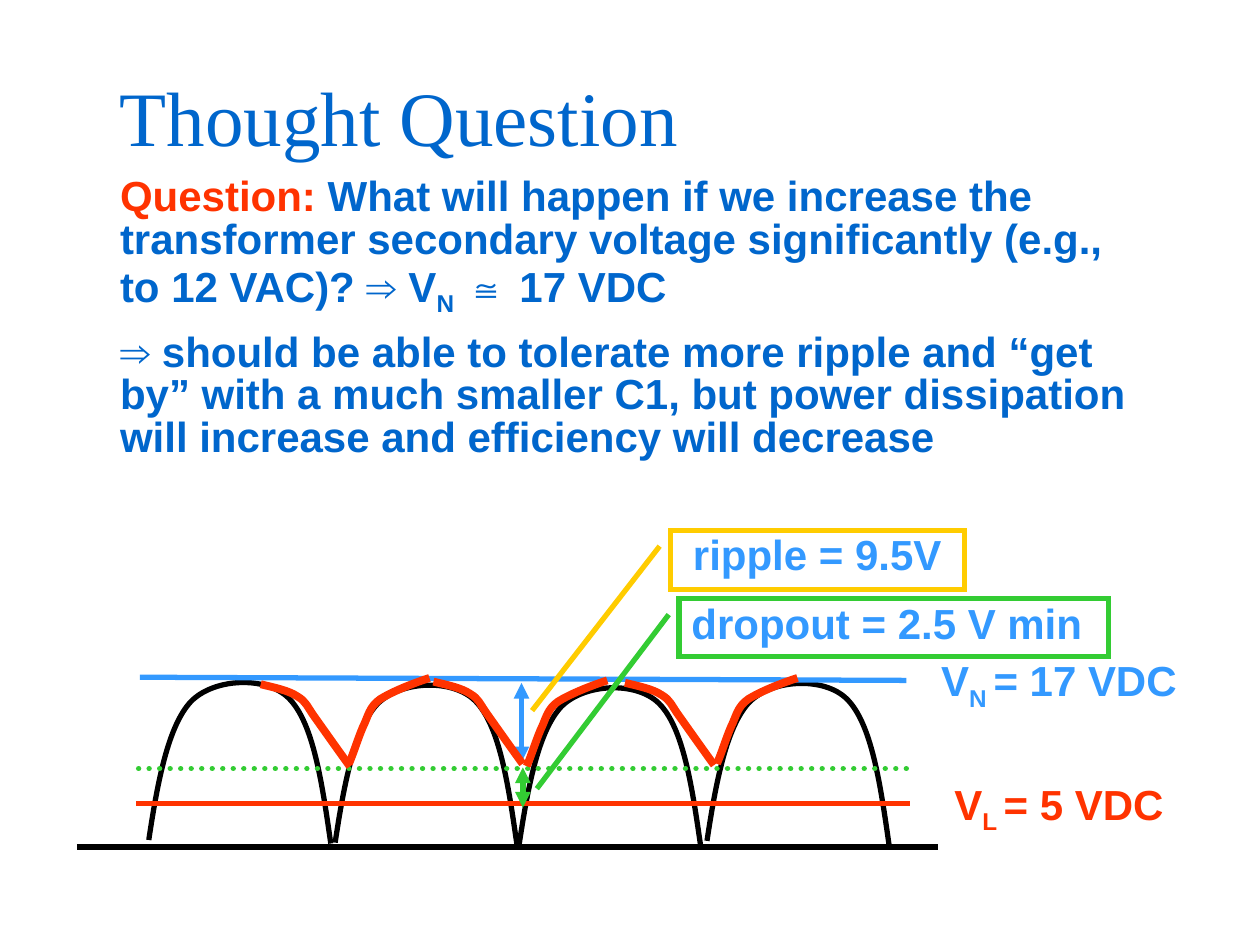
import pptx
import pptx.dml.color
import pptx.enum.dml
import pptx.enum.shapes
import pptx.enum.text
import pptx.oxml.ns
import pptx.util
from lxml import etree

Pt = pptx.util.Pt
RGBColor = pptx.dml.color.RGBColor
ALIGN = pptx.enum.text.PP_ALIGN
qn = pptx.oxml.ns.qn
BLUE = RGBColor(0x00, 0x66, 0xCC)
SKY = RGBColor(0x33, 0x99, 0xFF)
RED = RGBColor(0xFF, 0x33, 0x00)
GREEN = RGBColor(0x33, 0xCC, 0x33)
GOLD = RGBColor(0xFF, 0xCC, 0x00)
BLACK = RGBColor(0x00, 0x00, 0x00)

ARCH = ((0, 94), (5, 61), (11, 29), (24, 15), (37, 1.5), (67, 0), (80, 13),
        (94, 27), (99, 61), (104, 96))
DISCHARGE = ((0, 0), (8, 2), (16, 3.6), (21, 7), (26, 10), (26, 12), (31, 19),
             (36, 26), (43, 36), (51, 47))
CHARGE = ((0, 49), (3, 42), (5, 35), (8, 28), (11, 22), (11.5, 16.5), (18, 12),
          (24.5, 8), (35, 3.6), (46, 0))
ARCH_SPOTS = ((41, 83), (147.5, 84.5), (252.6, 86), (360, 83.5))
DISCHARGE_SPOTS = ((105, 88), (203.7, 86.5), (313.1, 87.2))
CHARGE_SPOTS = ((155.4, 84.4), (257, 85.8), (365.7, 84.4))


def add_curve(page, curve, left, top, color, width):
    """Draw an unfilled chain of cubic curves that starts at left, top."""
    points = [(Pt(left + x), Pt(top + y)) for x, y in curve]
    builder = page.shapes.build_freeform(*points[0])
    builder.add_line_segments(points[1:], close=False)
    shape = builder.convert_to_shape()
    outline = next(shape._element.iter(qn("a:path")))
    segments = outline.findall(qn("a:lnTo"))
    for start in range(0, len(segments), 3):
        cubic = etree.SubElement(outline, qn("a:cubicBezTo"))
        for segment in segments[start:start + 3]:
            cubic.append(segment[0])
            outline.remove(segment)
    shape.shadow.inherit = False
    shape.fill.background()
    shape.line.color.rgb = color
    shape.line.width = Pt(width)


def add_line(page, start, end, color, dotted=False, arrows=False):
    """Draw a straight line, optionally dotted or with two arrowheads."""
    line = page.shapes.add_connector(pptx.enum.shapes.MSO_CONNECTOR.STRAIGHT,
                                     *(Pt(value) for value in start + end))
    line.line.color.rgb = color
    line.line.width = Pt(3)
    properties = line._element.spPr
    stroke = properties.find(qn("a:ln"))
    if dotted:
        line.line.dash_style = pptx.enum.dml.MSO_LINE.ROUND_DOT
        stroke.set("cap", "rnd")
    if arrows:
        for end_name in ("a:headEnd", "a:tailEnd"):
            etree.SubElement(stroke, qn(end_name), type="triangle")
    etree.SubElement(properties, qn("a:effectLst"))


def write_paragraph(para, spans, color, align=ALIGN.LEFT):
    """Fill a paragraph from (text, color, is_subscript) spans."""
    para.alignment = align
    para.line_spacing = 0.85
    para.font.name = "Arial"
    para.font.size = Pt(24)
    para.font.bold = True
    para.font.color.rgb = color
    for text, span_color, subscript in spans:
        span = para.add_run()
        span.text = text
        if span_color:
            span.font.color.rgb = span_color
        if subscript:
            span._r.get_or_add_rPr().set("baseline", "-25000")


def add_text(page, box):
    """Add a wrapping text box and return its frame."""
    frame = page.shapes.add_textbox(*(Pt(value) for value in box)).text_frame
    frame.word_wrap = True
    return frame


def add_callout(page, box, text, color, adjustments, align):
    """Add a square-cornered callout with a leader line."""
    shape = page.shapes.add_shape(pptx.enum.shapes.MSO_SHAPE.LINE_CALLOUT_1,
                                  *(Pt(value) for value in box))
    for index, value in enumerate(adjustments):
        shape.adjustments[index] = value
    shape.shadow.inherit = False
    shape.fill.background()
    shape.line.color.rgb = color
    shape.line.width = Pt(3)
    etree.SubElement(shape._element.spPr.find(qn("a:ln")), qn("a:miter"), lim="800000")
    shape.text_frame.vertical_anchor = pptx.enum.text.MSO_ANCHOR.TOP
    write_paragraph(shape.text_frame.paragraphs[0], [(text, None, False)], SKY, align)


def place_title(page, box):
    """Move and format the title placeholder."""
    title = page.shapes.title
    title.left, title.top, title.width, title.height = (Pt(value) for value in box)
    title.text_frame.vertical_anchor = pptx.enum.text.MSO_ANCHOR.MIDDLE
    para = title.text_frame.paragraphs[0]
    para.text = "Thought Question"
    para.alignment = ALIGN.LEFT
    para.font.name = "Times New Roman"
    para.font.size = Pt(44)
    para.font.color.rgb = BLUE


def place_question(page, box):
    """Write the question and its answer."""
    frame = add_text(page, box)
    write_paragraph(frame.paragraphs[0], [
        ("Question:", RED, False),
        (" What will happen if we increase the transformer secondary voltage "
         "significantly (e.g., to 12 VAC)? ⇒ V", None, False),
        ("N", None, True),
        (" ≅ 17 VDC", None, False),
    ], BLUE)
    answer = frame.add_paragraph()
    write_paragraph(answer, [
        ("⇒ should be able to tolerate more ripple and “get by” with a much smaller C1, "
         "but power dissipation will increase and efficiency will decrease", None, False),
    ], BLUE)
    answer.space_before = Pt(12)


def place_waveform(page, left, top):
    """Draw the rectified waveform with its levels, labels and callouts."""
    def at(x, y, *size):
        """Shift a diagram position onto the page."""
        return (left + x, top + y) + size

    add_line(page, at(0, 181), at(492, 181), BLACK)
    for spot in ARCH_SPOTS:
        add_curve(page, ARCH, *at(*spot), BLACK, 3)
    add_line(page, at(36, 84), at(474, 85.8), SKY)
    add_callout(page, at(339, 0, 168, 34), "ripple = 9.5V", GOLD,
                (0.268, -0.036, 3.033, -0.47), ALIGN.CENTER)
    add_line(page, at(34, 156.2), at(476, 156.2), RED)
    add_line(page, at(254, 87.2), at(254, 132.6), SKY, arrows=True)
    add_line(page, at(254.8, 135.5), at(254.8, 158.5), GREEN, arrows=True)
    add_line(page, at(35.2, 136.2), at(477.3, 136.2), GREEN, dotted=True)
    add_callout(page, at(344, 39.2, 245.5, 33), "dropout = 2.5 V min", GREEN,
                (0.274, -0.024, 3.289, -0.331), ALIGN.LEFT)
    for curve, spots in ((DISCHARGE, DISCHARGE_SPOTS), (CHARGE, CHARGE_SPOTS)):
        for spot in spots:
            add_curve(page, curve, *at(*spot), RED, 4.5)
    for box, name, subscript, value, color in (
        (at(474.6, 69.2, 173, 32), "V", "N ", "= 17 VDC", SKY),
        (at(468.8, 140, 178, 32), " V", "L ", "= 5 VDC", RED),
    ):
        spans = [(name, None, False), (subscript, None, True), (value, None, False)]
        write_paragraph(add_text(page, box).paragraphs[0], spans, color, ALIGN.CENTER)


def main():
    """Build and save the deck."""
    deck = pptx.Presentation()
    deck.slide_width, deck.slide_height = Pt(720), Pt(540)
    page = deck.slides.add_slide(deck.slide_layouts[5])
    place_title(page, (61.2, 20.9, 612, 90))
    place_question(page, (61.5, 97.8, 600, 168.5))
    place_waveform(page, 44, 303)
    deck.save("out.pptx")


if __name__ == "__main__":
    main()
